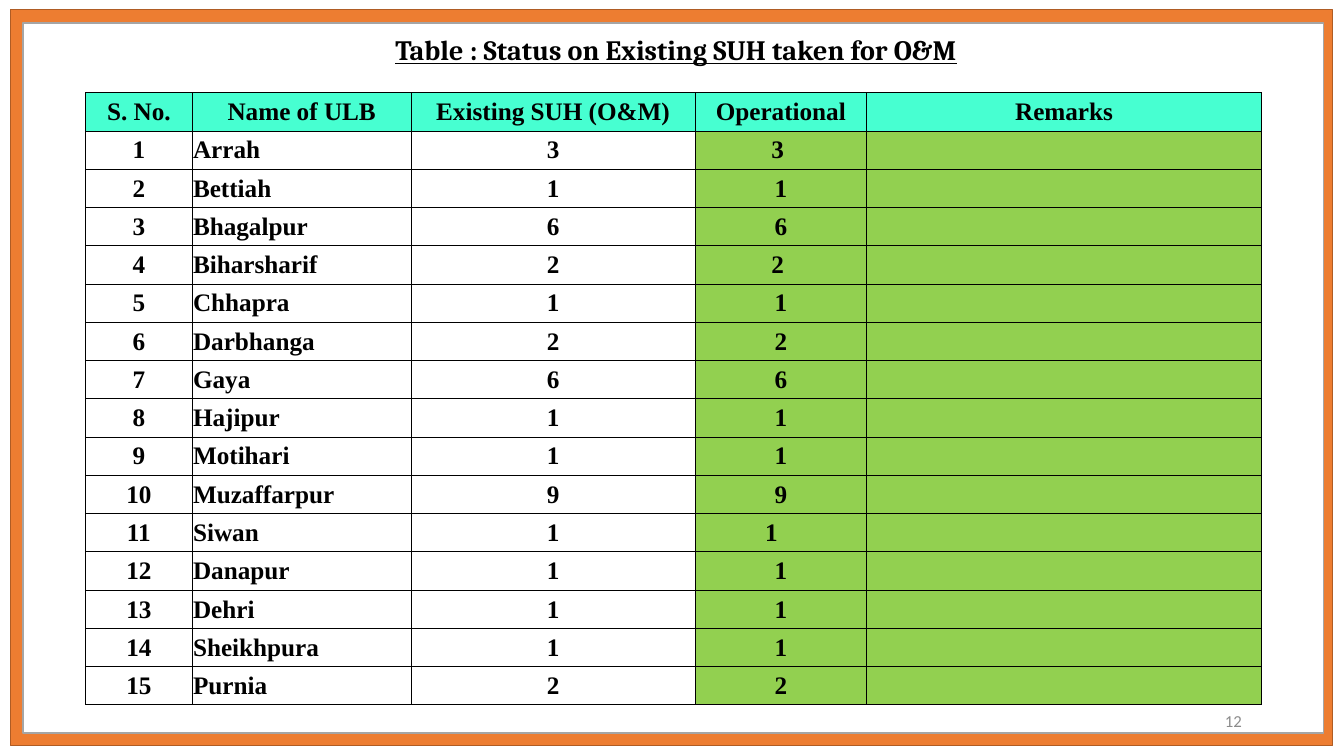
from lxml import etree
from pptx import Presentation
from pptx.dml.color import RGBColor
from pptx.enum.shapes import MSO_SHAPE
from pptx.enum.text import MSO_ANCHOR, PP_ALIGN
from pptx.oxml.ns import qn
from pptx.util import Pt

RECTANGLE = MSO_SHAPE.RECTANGLE
MIDDLE = MSO_ANCHOR.MIDDLE
LEFT, CENTER, RIGHT = PP_ALIGN.LEFT, PP_ALIGN.CENTER, PP_ALIGN.RIGHT

COLORS = {
    "frame": "ED7D31", "frame_edge": "AF5C24",
    "page": "FFFFFF", "page_edge": "A5A5A5",
    "header": "47FFD1", "status": "92D050",
    "text": "000000", "page_number": "8C8C8C",
}
HEADINGS = ["S. No.", "Name of ULB", "Existing SUH (O&M)", "Operational", "Remarks"]
COLUMN_WIDTHS = [76.4, 156.2, 203, 122.4, 282.2]
ROW_HEIGHT = 27.33
SHELTERS = [
    ("Arrah", 3), ("Bettiah", 1), ("Bhagalpur", 6), ("Biharsharif", 2),
    ("Chhapra", 1), ("Darbhanga", 2), ("Gaya", 6), ("Hajipur", 1),
    ("Motihari", 1), ("Muzaffarpur", 9), ("Siwan", 1), ("Danapur", 1),
    ("Dehri", 1), ("Sheikhpura", 1), ("Purnia", 2),
]
# Extra right margin, in points, for counts that sit left of centre
COUNT_SHIFTS = {"Arrah": 4.5, "Biharsharif": 4.5, "Siwan": 13.5}


class StatusSlide:
    def __init__(self, presentation):
        self.slide = presentation.slides.add_slide(presentation.slide_layouts[5])
        self.shapes = self.slide.shapes

    def color(self, name):
        return RGBColor.from_string(COLORS[name])

    def add_text(self, text_frame, text, font, size, align, color="text",
                 bold=False, underline=False):
        paragraph = text_frame.paragraphs[0]
        paragraph.alignment = align
        run = paragraph.add_run()
        run.text = text
        run.font.name = font
        run.font.size = Pt(size)
        run.font.bold = bold
        run.font.underline = underline
        run.font.color.rgb = self.color(color)

    def panel(self, left, top, width, height, fill, edge):
        panel = self.shapes.add_shape(
            RECTANGLE, Pt(left), Pt(top), Pt(width), Pt(height))
        panel.shadow.inherit = False
        panel.fill.solid()
        panel.fill.fore_color.rgb = self.color(fill)
        panel.line.color.rgb = self.color(edge)
        panel.line.width = Pt(1)

    def title(self, text, left, top, width, height):
        """Fill the title placeholder and bring it in front of the panels."""
        title = self.shapes.title
        title.left, title.top = Pt(left), Pt(top)
        title.width, title.height = Pt(width), Pt(height)
        title.text_frame.word_wrap = True
        title.text_frame.vertical_anchor = MIDDLE
        self.add_text(title.text_frame, text, "Cambria", 20, CENTER,
                      bold=True, underline=True)
        title._element.getparent().append(title._element)

    def page_number(self, text, left, top, width, height):
        box = self.shapes.add_textbox(Pt(left), Pt(top), Pt(width), Pt(height))
        box.text_frame.word_wrap = True
        box.text_frame.vertical_anchor = MIDDLE
        self.add_text(box.text_frame, text, "Calibri", 12, RIGHT, "page_number")

    def borders(self, cell):
        """Put the four edges ahead of the fill, as the schema orders them."""
        properties = cell._tc.get_or_add_tcPr()
        for position, side in enumerate(("lnL", "lnR", "lnT", "lnB")):
            edge = etree.Element(qn(f"a:{side}"), w=str(Pt(0.5)))
            fill = etree.SubElement(edge, qn("a:solidFill"))
            etree.SubElement(fill, qn("a:srgbClr"), val=COLORS["text"])
            properties.insert(position, edge)

    def cell(self, cell, text, align, fill, shift=0):
        cell.vertical_anchor = MIDDLE
        cell.margin_left = cell.margin_top = Pt(0.5)
        cell.margin_right = Pt(0.5 + shift)
        cell.margin_bottom = 0
        if fill:
            cell.fill.solid()
            cell.fill.fore_color.rgb = self.color(fill)
        else:
            cell.fill.background()
        self.borders(cell)
        if text:
            self.add_text(cell.text_frame, text, "Times New Roman", 18, align, bold=True)

    def table(self, left, top):
        row_count = len(SHELTERS) + 1
        table = self.shapes.add_table(
            row_count, len(HEADINGS), Pt(left), Pt(top),
            Pt(sum(COLUMN_WIDTHS)), Pt(ROW_HEIGHT * row_count)).table
        table.horz_banding = False
        for column, width in zip(table.columns, COLUMN_WIDTHS):
            column.width = Pt(width)
        for row in table.rows:
            row.height = Pt(ROW_HEIGHT)

        for column, heading in enumerate(HEADINGS):
            self.cell(table.cell(0, column), heading, CENTER, "header")
        for number, (city, count) in enumerate(SHELTERS, start=1):
            entries = [
                (str(number), CENTER, None),
                (city, LEFT, None),
                (str(count), CENTER, None),
                (str(count), CENTER, "status", COUNT_SHIFTS.get(city, 0)),
                ("", LEFT, "status"),
            ]
            for column, entry in enumerate(entries):
                self.cell(table.cell(number, column), *entry)


def main():
    presentation = Presentation()
    presentation.slide_width, presentation.slide_height = Pt(960), Pt(540)
    status = StatusSlide(presentation)
    status.panel(7.4, 7, 944.6, 525.6, "frame", "frame_edge")
    status.panel(16.5, 16.5, 929, 507, "page", "page_edge")
    status.page_number("12", 678.2, 500.4, 216, 28.8)
    status.title("Table : Status on Existing SUH taken for O&M", 41, 19.4, 884, 31.7)
    status.table(61, 66.2)
    presentation.save("out.pptx")


if __name__ == "__main__":
    main()
